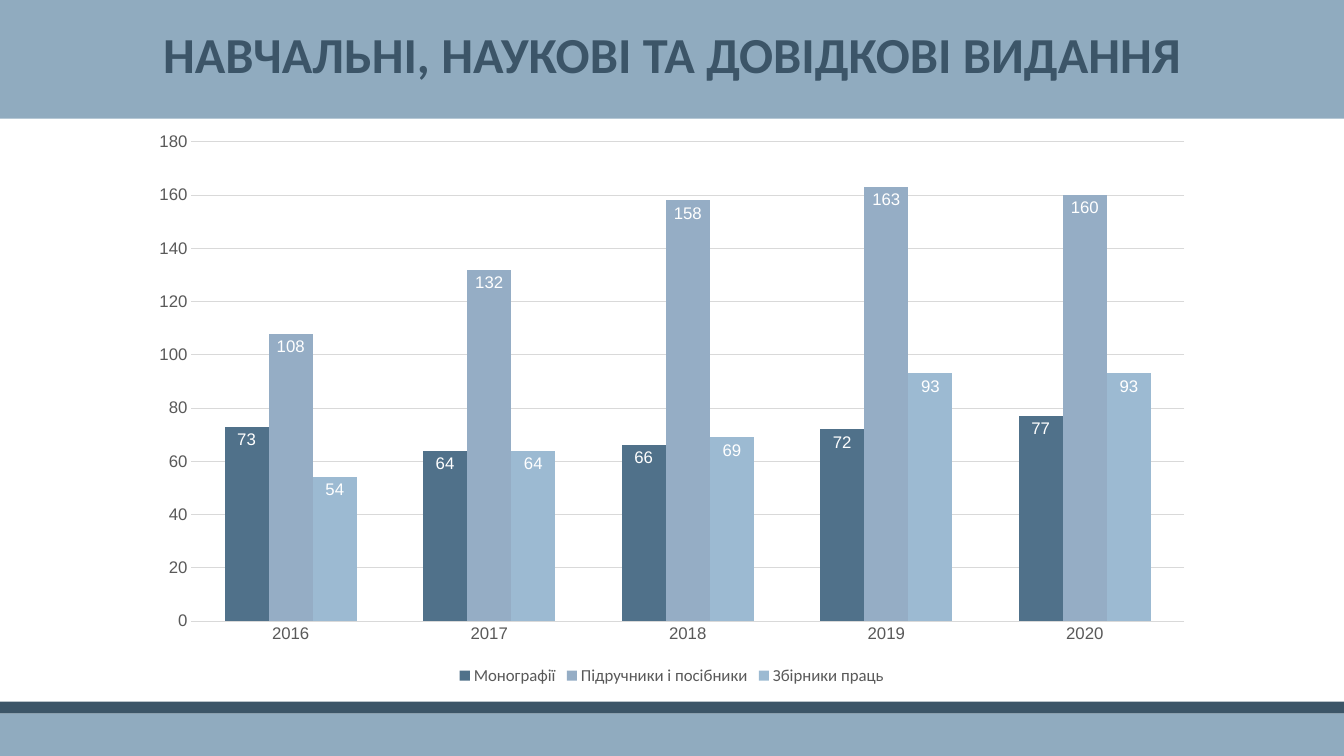
from lxml import etree
from pptx import Presentation
from pptx.chart.data import CategoryChartData
from pptx.dml.color import RGBColor
from pptx.enum.chart import XL_CHART_TYPE, XL_LABEL_POSITION, XL_LEGEND_POSITION, XL_TICK_MARK
from pptx.enum.shapes import MSO_SHAPE
from pptx.enum.text import MSO_ANCHOR, MSO_AUTO_SIZE, PP_ALIGN
from pptx.oxml.ns import qn
from pptx.util import Cm, Pt

COLUMNS = XL_CHART_TYPE.COLUMN_CLUSTERED
INSIDE_END = XL_LABEL_POSITION.INSIDE_END
LEGEND_BOTTOM = XL_LEGEND_POSITION.BOTTOM
NO_TICKS = XL_TICK_MARK.NONE
RECTANGLE = MSO_SHAPE.RECTANGLE
MIDDLE = MSO_ANCHOR.MIDDLE
NO_AUTO_SIZE = MSO_AUTO_SIZE.NONE
CENTER = PP_ALIGN.CENTER

SLIDE_WIDTH, SLIDE_HEIGHT = Cm(33.87), Cm(19.05)
BAND, STRIPE, TITLE = "90ABBF", "3C5567", "3C5568"
WHITE, CHART_TEXT, GRID = "FFFFFF", "595959", "D9D9D9"

TITLE_TEXT = "НАВЧАЛЬНІ, НАУКОВІ ТА ДОВІДКОВІ ВИДАННЯ"
YEARS = ["2016", "2017", "2018", "2019", "2020"]
PUBLICATIONS = [
    ("Монографії", "50718A", (73, 64, 66, 72, 77)),
    ("Підручники і посібники", "95ADC5", (108, 132, 158, 163, 160)),
    ("Збірники праць", "9CBAD2", (54, 64, 69, 93, 93)),
]
PLOT_LAYOUT = {"x": 0.05, "y": 0.04, "w": 0.93, "h": 0.84}


def color(value):
    """Return the colour of a hex string."""
    return RGBColor.from_string(value)


def format_font(font, size, hex_color, name, bold=False):
    """Set the look of a font."""
    font.size = Pt(size)
    font.color.rgb = color(hex_color)
    font.name = name
    font.bold = bold


def add_band(slide, top, height, fill):
    """Add a band across the whole slide."""
    band = slide.shapes.add_shape(RECTANGLE, 0, top, SLIDE_WIDTH, height)
    band.shadow.inherit = False
    band.fill.solid()
    band.fill.fore_color.rgb = color(fill)
    band.line.fill.background()


def set_title(slide, text):
    """Place and format the title in front of the bands."""
    title = slide.shapes.title
    title.left, title.top, title.width, title.height = Cm(3.23), Cm(0.61), Cm(27.43), Cm(1.65)
    frame = title.text_frame
    frame.word_wrap = True
    frame.auto_size = NO_AUTO_SIZE
    frame.vertical_anchor = MIDDLE
    frame.margin_left = frame.margin_right = frame.margin_top = frame.margin_bottom = 0
    paragraph = frame.paragraphs[0]
    paragraph.alignment = CENTER
    paragraph.line_spacing = 0.9
    run = paragraph.add_run()
    run.text = text
    format_font(run.font, 36, TITLE, "Calibri", bold=True)
    title.element.getparent().append(title.element)


def format_axis(axis):
    """Give an axis plain grey labels without line or ticks."""
    axis.major_tick_mark = axis.minor_tick_mark = NO_TICKS
    axis.format.line.fill.background()
    format_font(axis.tick_labels.font, 12, CHART_TEXT, "Arial")


def set_plot_layout(chart, fractions):
    """Fix the inner plot area as fractions of the chart."""
    plot_area = chart.element.find(".//" + qn("c:plotArea"))
    layout = plot_area.find(qn("c:layout"))
    if layout is None:
        layout = etree.Element(qn("c:layout"))
        plot_area.insert(0, layout)
    manual = etree.SubElement(layout, qn("c:manualLayout"))
    settings = {"layoutTarget": "inner", "xMode": "edge", "yMode": "edge", **fractions}
    for name, value in settings.items():
        etree.SubElement(manual, qn("c:" + name)).set("val", str(value))


def format_series(series, fill):
    """Colour a series and label its columns."""
    series.format.fill.solid()
    series.format.fill.fore_color.rgb = color(fill)
    series.invert_if_negative = False
    labels = series.data_labels
    labels.show_value = True
    labels.position = INSIDE_END
    format_font(labels.font, 12, WHITE, "Arial")


def add_publications_chart(slide):
    """Add the column chart of publications by year."""
    data = CategoryChartData()
    data.categories = YEARS
    for name, _, values in PUBLICATIONS:
        data.add_series(name, values)
    frame = slide.shapes.add_chart(COLUMNS, Cm(3.48), Cm(3), Cm(26.9), Cm(14.38), data)
    chart = frame.chart
    chart.has_title = False
    format_font(chart.font, 10, "000000", "Arial")
    chart.has_legend = True
    chart.legend.position = LEGEND_BOTTOM
    chart.legend.include_in_layout = False
    format_font(chart.legend.font, 12, CHART_TEXT, "Calibri")
    format_axis(chart.category_axis)
    value_axis = chart.value_axis
    format_axis(value_axis)
    value_axis.minimum_scale, value_axis.maximum_scale, value_axis.major_unit = 0, 180, 20
    value_axis.has_major_gridlines = True
    grid_line = value_axis.major_gridlines.format.line
    grid_line.color.rgb = color(GRID)
    grid_line.width = Pt(0.75)
    plot = chart.plots[0]
    plot.gap_width = 150
    plot.overlap = 0
    plot.vary_by_categories = False
    for series, (_, fill, _) in zip(plot.series, PUBLICATIONS):
        format_series(series, fill)
    set_plot_layout(chart, PLOT_LAYOUT)


def main():
    """Build and save the slide."""
    presentation = Presentation()
    presentation.slide_width, presentation.slide_height = SLIDE_WIDTH, SLIDE_HEIGHT
    slide = presentation.slides.add_slide(presentation.slide_layouts.get_by_name("Title Only"))
    add_publications_chart(slide)
    add_band(slide, Cm(-0.13), Cm(3.12), BAND)
    set_title(slide, TITLE_TEXT)
    add_band(slide, Cm(17.98), Cm(1.07), BAND)
    add_band(slide, Cm(17.68), Cm(0.3), STRIPE)
    presentation.save("out.pptx")


if __name__ == "__main__":
    main()
